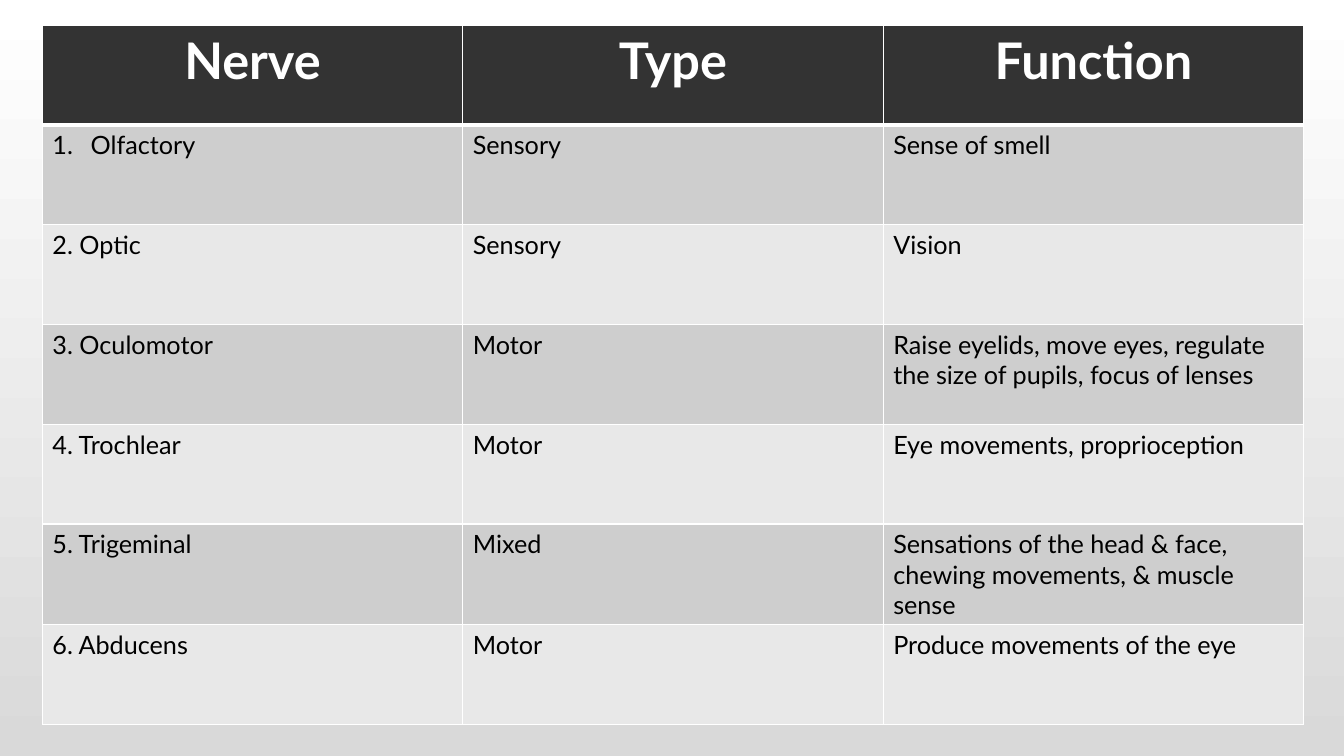
from typing import NamedTuple

from lxml import etree
from pptx import Presentation
from pptx.dml.color import RGBColor
from pptx.enum.text import PP_ALIGN
from pptx.oxml.ns import qn
from pptx.util import Inches, Pt

CENTER, LEFT = PP_ALIGN.CENTER, PP_ALIGN.LEFT
FONT = "Lato"
COLORS = {
    "header": "333333",
    "odd_row": "CECECE",
    "even_row": "E8E8E8",
    "white": "FFFFFF",
    "text": "000000",
    "backdrop": "D9D9D9",
}
ROW_HEIGHT, COLUMN_WIDTH = Inches(0.99), Inches(4.17)
NUMBER_INDENT = Inches(0.38)


class Nerve(NamedTuple):
    name: str
    type: str
    function: str


HEADINGS = Nerve("Nerve", "Type", "Function")
NERVES = [
    Nerve("Olfactory", "Sensory", "Sense of smell"),
    Nerve("2. Optic", "Sensory", "Vision"),
    Nerve("3. Oculomotor", "Motor",
          "Raise eyelids, move eyes, regulate the size of pupils, focus of lenses"),
    Nerve("4. Trochlear", "Motor", "Eye movements, proprioception"),
    Nerve("5. Trigeminal", "Mixed",
          "Sensations of the head & face, chewing movements, & muscle sense"),
    Nerve("6. Abducens", "Motor", "Produce movements of the eye"),
]


def rgb(name: str) -> RGBColor:
    return RGBColor.from_string(COLORS[name])


def set_borders(cell, top: float = 1, bottom: float = 1) -> None:
    """Draw white cell edges, with widths in points."""
    properties = cell._tc.get_or_add_tcPr()
    for side, width in (("L", 1), ("R", 1), ("T", top), ("B", bottom)):
        line = etree.SubElement(properties, qn(f"a:ln{side}"), w=str(Pt(width)))
        fill = etree.SubElement(line, qn("a:solidFill"))
        etree.SubElement(fill, qn("a:srgbClr"), val=COLORS["white"])


def write_text(cell, text: str, *, size: float = 18, color: str = "text",
               bold: bool = False, align=LEFT) -> None:
    para = cell.text_frame.paragraphs[0]
    para.alignment = align
    span = para.add_run()
    span.text = text
    span.font.name = FONT
    span.font.size = Pt(size)
    span.font.bold = bold
    span.font.color.rgb = rgb(color)


def number_paragraph(para) -> None:
    """Give a paragraph automatic numbering with a hanging indent."""
    properties = para._p.get_or_add_pPr()
    properties.set("marL", str(NUMBER_INDENT))
    properties.set("indent", str(-NUMBER_INDENT))
    etree.SubElement(properties, qn("a:buFont"), typeface="+mj-lt")
    etree.SubElement(properties, qn("a:buAutoNum"), type="arabicPeriod")


def fill_row(table, index: int, texts: Nerve, fill: str,
             top: float = 1, bottom: float = 1, **text_format) -> None:
    table.rows[index].height = ROW_HEIGHT
    for column, text in enumerate(texts):
        cell = table.cell(index, column)
        set_borders(cell, top, bottom)
        cell.fill.solid()
        cell.fill.fore_color.rgb = rgb(fill)
        write_text(cell, text, **text_format)


def main() -> None:
    deck = Presentation()
    deck.slide_width, deck.slide_height = Inches(13.33), Inches(7.5)
    page = deck.slides.add_slide(deck.slide_layouts[6])

    # Background: grey at the bottom fading to white at the top
    backdrop = page.background.fill
    backdrop.gradient()
    backdrop.gradient_angle = 90
    for stop, color in zip(backdrop.gradient_stops, ("backdrop", "white")):
        stop.color.rgb = rgb(color)

    # Table of cranial nerves
    row_count, column_count = len(NERVES) + 1, len(HEADINGS)
    table = page.shapes.add_table(
        row_count, column_count, Inches(0.42), Inches(0.25),
        COLUMN_WIDTH * column_count, ROW_HEIGHT * row_count).table
    for column in table.columns:
        column.width = COLUMN_WIDTH

    # Header row, then banded rows
    fill_row(table, 0, HEADINGS, "header", bottom=3,
             size=36, color="white", bold=True, align=CENTER)
    for index, nerve in enumerate(NERVES, start=1):
        fill_row(table, index, nerve, "odd_row" if index % 2 else "even_row",
                 top=3 if index == 1 else 1)
    number_paragraph(table.cell(1, 0).text_frame.paragraphs[0])

    deck.save("out.pptx")


if __name__ == "__main__":
    main()
